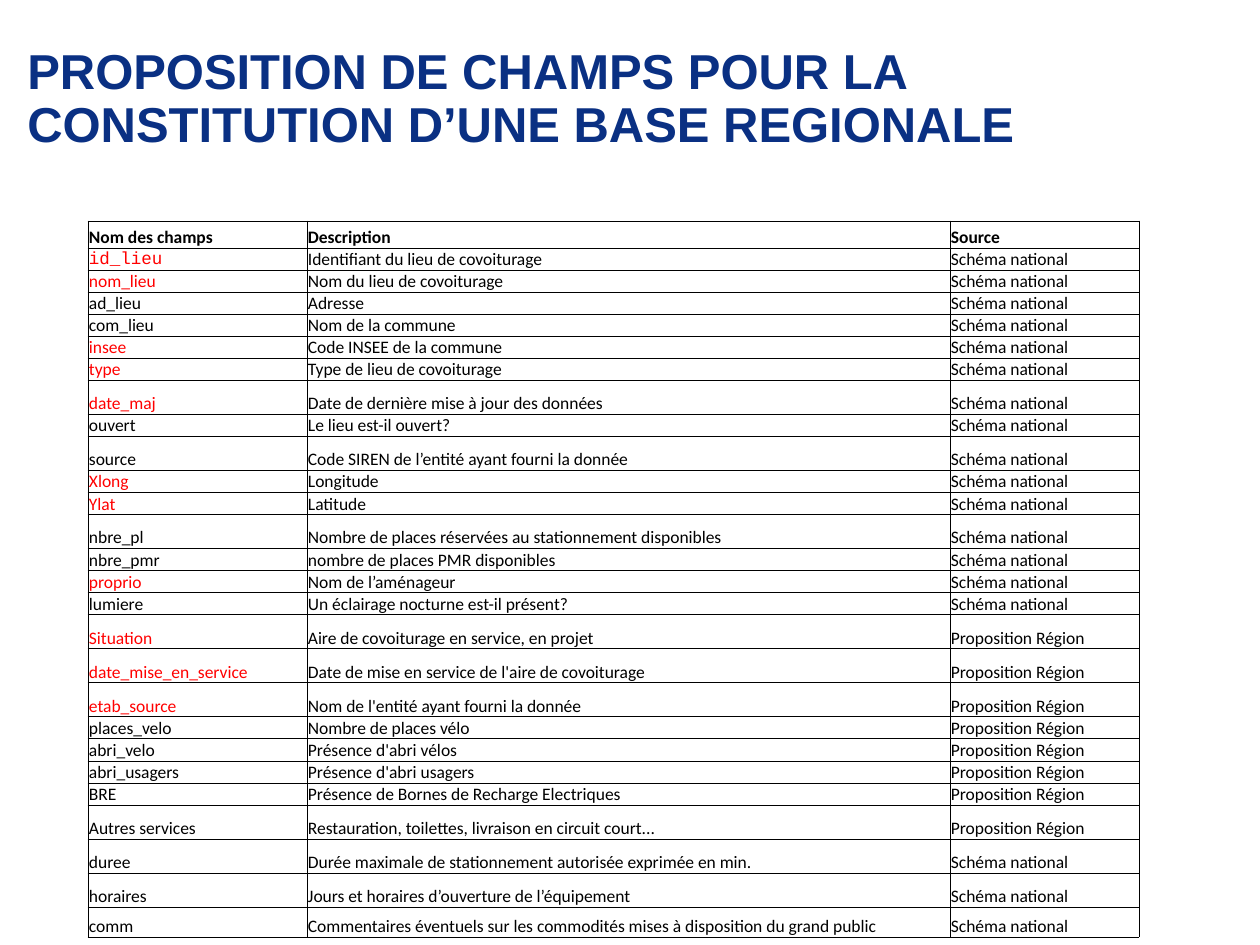
import pptx
import pptx.dml.color
import pptx.enum.text
import pptx.oxml
import pptx.util

RGBColor = pptx.dml.color.RGBColor
Anchor = pptx.enum.text.MSO_ANCHOR
NAVY = RGBColor(0x0A, 0x30, 0x83)
RED = RGBColor(0xFF, 0x00, 0x00)
BLACK = RGBColor(0x00, 0x00, 0x00)

NATIONAL = "Schéma national"
REGION = "Proposition Région"
HEADER, NORMAL, TALL, LAST = 27, 18, 34, 30
COLUMN_WIDTHS = (219, 643, 189)
HEADINGS = ("Nom des champs", "Description", "Source")
FIELDS = [
    ("id_lieu", "Identifiant du lieu de covoiturage", NATIONAL, NORMAL),
    ("nom_lieu", "Nom du lieu de covoiturage", NATIONAL, NORMAL),
    ("ad_lieu", "Adresse", NATIONAL, NORMAL),
    ("com_lieu", "Nom de la commune", NATIONAL, NORMAL),
    ("insee", "Code INSEE de la commune", NATIONAL, NORMAL),
    ("type", "Type de lieu de covoiturage", NATIONAL, NORMAL),
    ("date_maj", "Date de dernière mise à jour des données", NATIONAL, TALL),
    ("ouvert", "Le lieu est-il ouvert?", NATIONAL, NORMAL),
    ("source", "Code SIREN de l’entité ayant fourni la donnée", NATIONAL, TALL),
    ("Xlong", "Longitude", NATIONAL, NORMAL),
    ("Ylat", "Latitude", NATIONAL, NORMAL),
    ("nbre_pl", "Nombre de places réservées au stationnement disponibles", NATIONAL, TALL),
    ("nbre_pmr", "nombre de places PMR disponibles", NATIONAL, NORMAL),
    ("proprio", "Nom de l’aménageur", NATIONAL, NORMAL),
    ("lumiere", "Un éclairage nocturne est-il présent?", NATIONAL, NORMAL),
    ("Situation", "Aire de covoiturage en service, en projet", REGION, TALL),
    ("date_mise_en_service", "Date de mise en service de l'aire de covoiturage", REGION, TALL),
    ("etab_source", "Nom de l'entité ayant fourni la donnée", REGION, TALL),
    ("places_velo", "Nombre de places vélo", REGION, NORMAL),
    ("abri_velo", "Présence d'abri vélos", REGION, NORMAL),
    ("abri_usagers", "Présence d'abri usagers", REGION, NORMAL),
    ("BRE", "Présence de Bornes de Recharge Electriques", REGION, NORMAL),
    ("Autres services", "Restauration, toilettes, livraison en circuit court...", REGION, TALL),
    ("duree", "Durée maximale de stationnement autorisée exprimée en min.", NATIONAL, TALL),
    ("horaires", "Jours et horaires d’ouverture de l’équipement", NATIONAL, TALL),
    ("comm", "Commentaires éventuels sur les commodités mises à disposition du grand public",
     NATIONAL, LAST),
]
REQUIRED = {
    "id_lieu", "nom_lieu", "insee", "type", "date_maj", "Xlong", "Ylat",
    "proprio", "Situation", "date_mise_en_service", "etab_source",
}


def px(length):
    return pptx.util.Emu(round(length * 914400 / 126))


def write_text(frame, text, *, size=10, font="Calibri", color=BLACK, bold=False, spacing=None):
    paragraph = frame.paragraphs[0]
    paragraph.line_spacing = spacing
    run = paragraph.add_run()
    run.text = text
    run.font.size = pptx.util.Pt(size)
    run.font.name = font
    run.font.color.rgb = color
    run.font.bold = bold


def add_title(slide, left, top, width, height):
    frame = slide.shapes.add_textbox(px(left), px(top), px(width), px(height)).text_frame
    frame.word_wrap = True
    frame.vertical_anchor = Anchor.MIDDLE
    write_text(frame, "PROPOSITION DE CHAMPS POUR LA CONSTITUTION D’UNE BASE REGIONALE",
               size=28, font="Arial", color=NAVY, bold=True, spacing=0.9)


def add_borders(cell):
    properties = cell._tc.get_or_add_tcPr()
    for position, side in enumerate(("lnL", "lnR", "lnT", "lnB")):
        properties.insert(position, pptx.oxml.parse_xml(
            f'<a:{side} xmlns:a="http://schemas.openxmlformats.org/drawingml/2006/main" w="6350">'
            f'<a:solidFill><a:srgbClr val="{BLACK}"/></a:solidFill></a:{side}>'))


def fill_cell(cell, text, **text_format):
    cell.margin_left = cell.margin_right = cell.margin_top = px(1)
    cell.margin_bottom = 0
    cell.vertical_anchor = Anchor.BOTTOM
    cell.fill.background()
    add_borders(cell)
    write_text(cell.text_frame, text, **text_format)


def add_field_table(slide, left, top, width, height):
    table = slide.shapes.add_table(len(FIELDS) + 1, len(HEADINGS),
                                   px(left), px(top), px(width), px(height)).table
    table.horz_banding = False
    for column, column_width in zip(table.columns, COLUMN_WIDTHS):
        column.width = px(column_width)
    table.rows[0].height = px(HEADER)
    for index, heading in enumerate(HEADINGS):
        fill_cell(table.cell(0, index), heading, bold=True)
    for row, (name, description, source, row_height) in enumerate(FIELDS, start=1):
        table.rows[row].height = px(row_height)
        fill_cell(table.cell(row, 0), name, color=RED if name in REQUIRED else BLACK,
                  font="Courier New" if name == "id_lieu" else "Calibri")
        fill_cell(table.cell(row, 1), description)
        fill_cell(table.cell(row, 2), source)
    table.cell(1, 0).vertical_anchor = Anchor.MIDDLE


def main():
    presentation = pptx.Presentation()
    presentation.slide_width = px(1260)
    presentation.slide_height = px(945)
    slide = presentation.slides.add_slide(presentation.slide_layouts[6])
    add_title(slide, 15, 60, 1210, 80)
    add_field_table(slide, 88, 221, sum(COLUMN_WIDTHS), 707)
    presentation.save("out.pptx")


if __name__ == "__main__":
    main()
